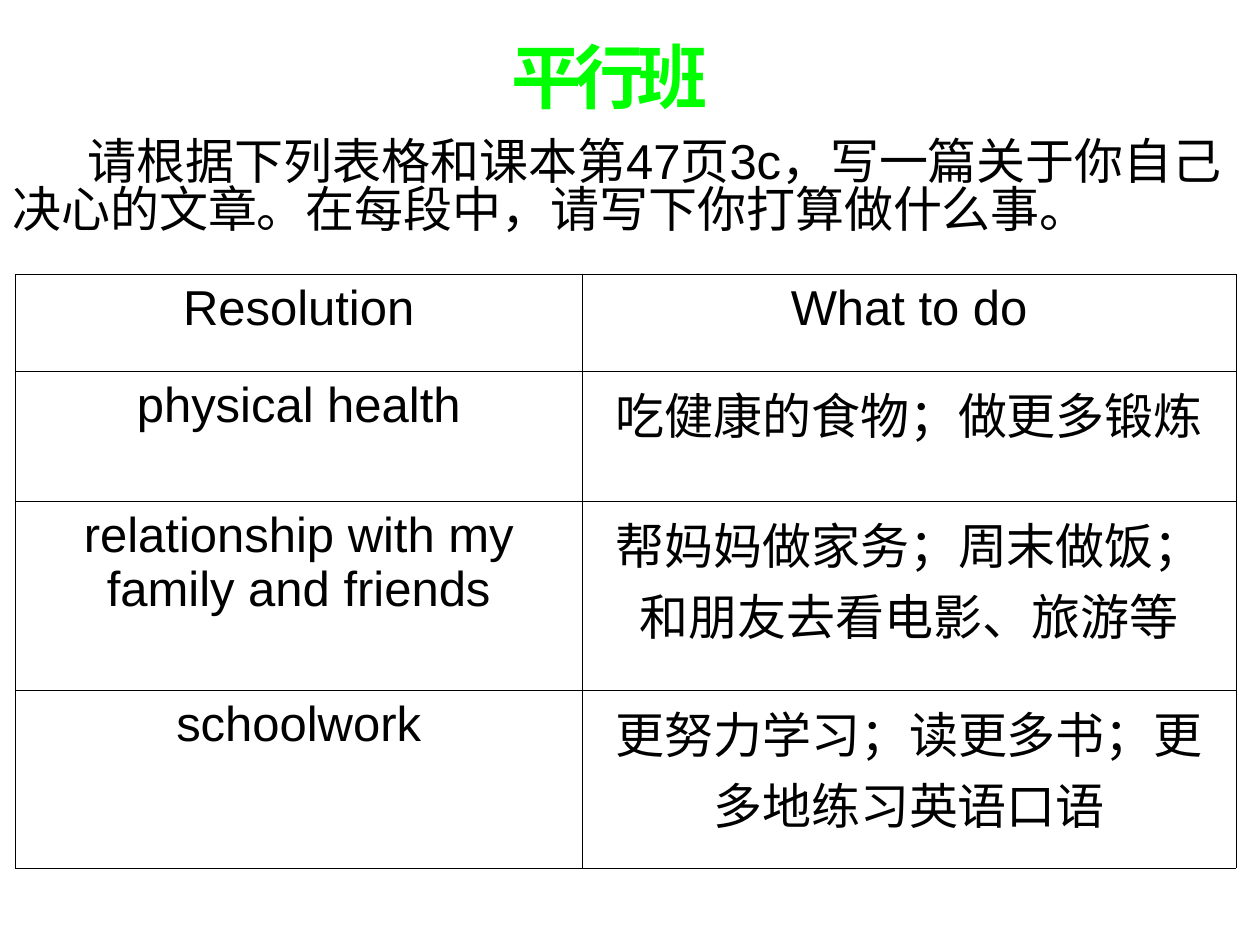
import pptx
import pptx.dml.color
import pptx.enum.text
import pptx.oxml
import pptx.oxml.ns
import pptx.util
from pptx.util import Inches

GREEN = pptx.dml.color.RGBColor(0x00, 0xFF, 0x00)
NAVY = pptx.dml.color.RGBColor(0x00, 0x00, 0x99)
BLACK = pptx.dml.color.RGBColor(0x00, 0x00, 0x00)
CENTER = pptx.enum.text.PP_ALIGN.CENTER
COLUMN_WIDTHS = (4.5, 5.19)
ROW_HEIGHTS = (0.77, 1.03, 1.5, 1.41)
RESOLUTIONS = (
    ("Resolution", "What to do"),
    ("physical health", "吃健康的食物；做更多锻炼"),
    ("relationship with my family and friends", "帮妈妈做家务；周末做饭；和朋友去看电影、旅游等"),
    ("schoolwork", "更努力学习；读更多书；更多地练习英语口语"),
)


def line_xml(tag, width, color):
    """Return a solid line element of the given tag, width and colour."""
    return pptx.oxml.parse_xml(
        f'<a:{tag} {pptx.oxml.ns.nsdecls("a")} w="{int(width)}"><a:solidFill>'
        f'<a:srgbClr val="{color}"/></a:solidFill></a:{tag}>'
    )


def add_run(paragraph, text, size=28, color=BLACK):
    """Add a run of Arial text and return it."""
    run = paragraph.add_run()
    run.text = text
    run.font.name = "Arial"
    run.font.size = pptx.util.Pt(size)
    run.font.color.rgb = color
    return run


def place_title(slide, left, top, width, height):
    """Move and format the title placeholder."""
    title = slide.shapes.title
    title.left, title.top, title.width, title.height = left, top, width, height
    frame = title.text_frame
    frame.word_wrap = False
    frame.auto_size = pptx.enum.text.MSO_AUTO_SIZE.NONE
    frame.vertical_anchor = pptx.enum.text.MSO_ANCHOR.MIDDLE
    paragraph = frame.paragraphs[0]
    paragraph.alignment = CENTER
    run = add_run(paragraph, "平行班", 40, GREEN)
    run.font.bold = True
    properties = run.font._element
    properties.set("spc", "-400")
    properties.insert(0, line_xml("ln", pptx.util.Pt(1), NAVY))


def add_instructions(slide, left, top, width, height):
    """Add the writing task with an indented first line."""
    frame = slide.shapes.add_textbox(left, top, width, height).text_frame
    frame.word_wrap = True
    paragraph = frame.paragraphs[0]
    paragraph.line_spacing = 0.82
    paragraph._p.get_or_add_pPr().set("indent", str(Inches(0.6)))
    add_run(paragraph, "请根据下列表格和课本第47页3c，写一篇关于你自己决心的文章。在每段中，请写下你打算做什么事。")


def format_cell(cell, text):
    """Fill one cell with centred text and thin borders."""
    cell.fill.background()
    paragraph = cell.text_frame.paragraphs[0]
    paragraph.alignment = CENTER
    add_run(paragraph, text)
    properties = cell._tc.get_or_add_tcPr()
    for index, tag in enumerate(("lnL", "lnR", "lnT", "lnB")):
        properties.insert(index, line_xml(tag, pptx.util.Pt(0.25), BLACK))


def add_resolutions(slide, left, top, width, height):
    """Add the table of resolutions and actions."""
    table = slide.shapes.add_table(
        len(ROW_HEIGHTS), len(COLUMN_WIDTHS), left, top, width, height
    ).table
    table.first_row = table.horz_banding = False
    for column, column_width in zip(table.columns, COLUMN_WIDTHS):
        column.width = Inches(column_width)
    for row, row_height, texts in zip(table.rows, ROW_HEIGHTS, RESOLUTIONS):
        row.height = Inches(row_height)
        for cell, text in zip(row.cells, texts):
            format_cell(cell, text)


def main():
    """Build and save the presentation."""
    presentation = pptx.Presentation()
    presentation.slide_width, presentation.slide_height = Inches(10), Inches(7.5)
    slide = presentation.slides.add_slide(presentation.slide_layouts[5])
    place_title(slide, Inches(3.11), Inches(0.13), Inches(3.46), Inches(0.94))
    add_instructions(slide, Inches(0), Inches(1.07), Inches(10), Inches(1.03))
    add_resolutions(
        slide, Inches(0.12), Inches(2.18), Inches(sum(COLUMN_WIDTHS)), Inches(sum(ROW_HEIGHTS))
    )
    presentation.save("out.pptx")


if __name__ == "__main__":
    main()
